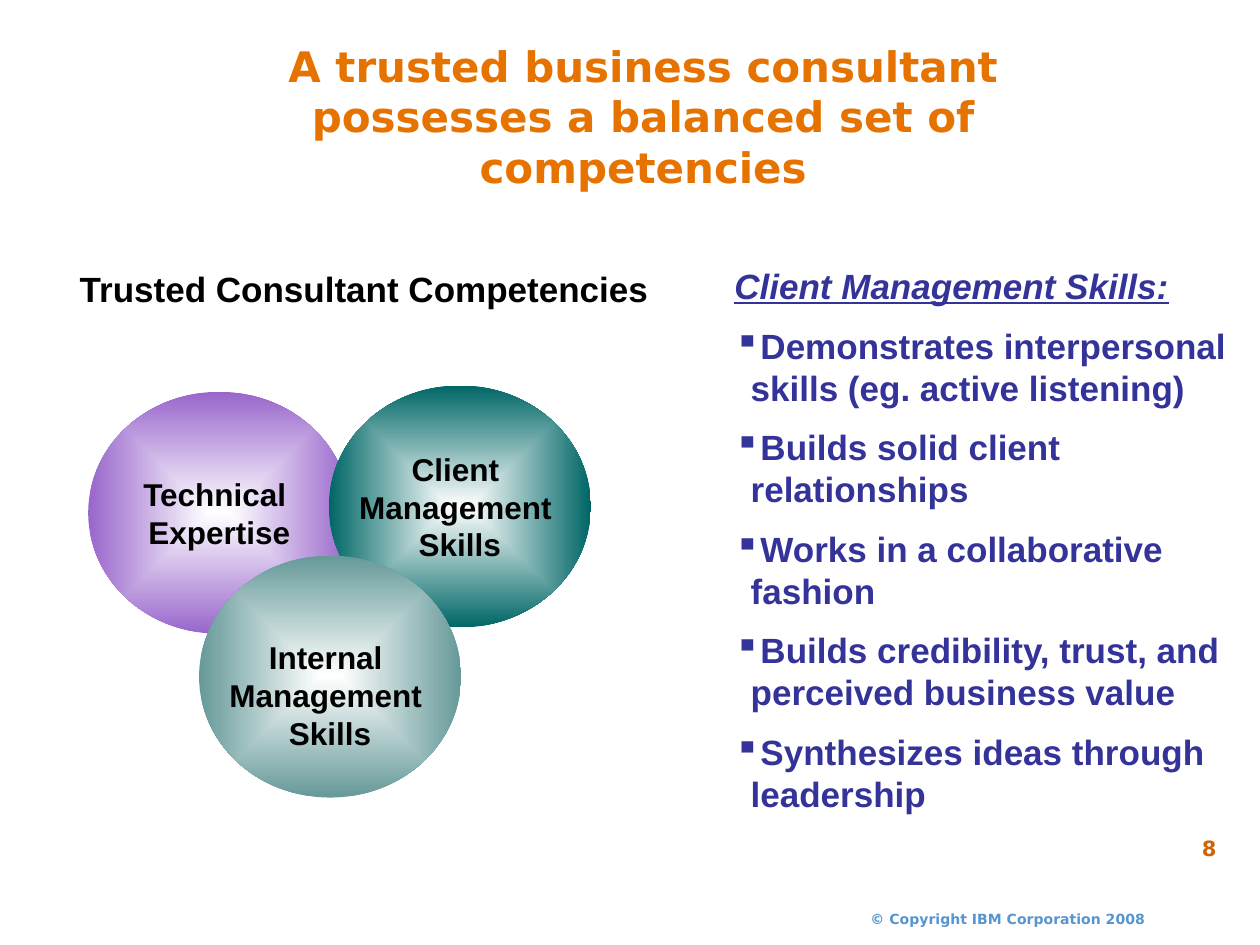
from dataclasses import dataclass

from lxml import etree
from pptx import Presentation
from pptx import util as u
from pptx.dml.color import RGBColor
from pptx.enum import shapes, text
from pptx.oxml.ns import qn

SANS, ARIAL = "DejaVu Sans", "Arial"
BLACK, WHITE, ORANGE, INDIGO = "000000", "FFFFFF", "E67300", "333399"
CENTER = text.PP_ALIGN.CENTER
ELLIPSE_SIZE = (2.08, 1.92)
INSET = dict(margin_left=0.1, margin_top=0.05, margin_right=0.1, margin_bottom=0.05)


@dataclass
class Competency:
    label: str
    left: float
    top: float
    colour: str
    inset_top: float = 0


@dataclass
class Line:
    words: str
    bullet: str = ""
    italic: bool = False
    underline: bool = False


COMPETENCIES = [
    Competency("Technical \nExpertise", 0.7, 3.11, "9966CC"),
    Competency("Client \nManagement \nSkills", 2.61, 3.06, "006666"),
    Competency("Internal \nManagement \nSkills", 1.58, 4.41, "669999", 0.29),
]
SKILLS = [
    "Demonstrates interpersonal skills (eg. active listening)",
    "Builds solid client relationships",
    "Works in a collaborative fashion",
    "Builds credibility, trust, and \nperceived business value",
    "Synthesizes ideas through leadership",
]


def rgb(colour: str) -> RGBColor:
    return RGBColor.from_string(colour)


def apply(target, values: dict) -> None:
    for name, value in values.items():
        setattr(target, name, value)


def write(paragraph, words: str, size: float, font: str, colour: str,
          align=None, **style) -> None:
    paragraph.text = words
    paragraph.alignment = align
    for run in paragraph.runs:
        apply(run.font, dict(size=u.Pt(size), name=font, bold=True, **style))
        run.font.color.rgb = rgb(colour)


def add_frame(slide, left: float, top: float, width: float, height: float,
              anchor=text.MSO_ANCHOR.TOP, **insets):
    """Add a wrapping text box and return its text frame."""
    box = slide.shapes.add_textbox(*map(u.Inches, (left, top, width, height)))
    frame = box.text_frame
    margins = {side: u.Inches(gap) for side, gap in (INSET | insets).items()}
    apply(frame, dict(word_wrap=True, vertical_anchor=anchor, **margins))
    return frame


def fill_from_centre(shape, colour: str) -> None:
    """Blend from white in the middle to the colour at the edge."""
    shape.fill.gradient()
    for stop, shade, position in zip(shape.fill.gradient_stops, (WHITE, colour), (0, 1)):
        stop.color.rgb = rgb(shade)
        stop.position = position
    gradient = shape._element.spPr.find(qn("a:gradFill"))
    gradient.remove(gradient.find(qn("a:lin")))
    path = etree.SubElement(gradient, qn("a:path"), {"path": "shape"})
    etree.SubElement(path, qn("a:fillToRect"), dict.fromkeys("ltrb", "50000"))


def add_competency(slide, item: Competency) -> None:
    ellipse = slide.shapes.add_shape(
        shapes.MSO_SHAPE.OVAL, *map(u.Inches, (item.left, item.top, *ELLIPSE_SIZE)))
    ellipse.shadow.inherit = False
    ellipse.line.fill.background()
    fill_from_centre(ellipse, item.colour)
    frame = ellipse.text_frame
    apply(frame, dict(word_wrap=False, vertical_anchor=text.MSO_ANCHOR.MIDDLE,
                      margin_left=0, margin_right=0, margin_bottom=0,
                      margin_top=u.Inches(item.inset_top)))
    write(frame.paragraphs[0], item.label, 18, ARIAL, BLACK, CENTER)


def add_skills(slide, lines: list[Line]) -> None:
    frame = add_frame(slide, 5.73, 2.05, 4.13, 4.6)
    for index, line in enumerate(lines):
        paragraph = frame.add_paragraph() if index else frame.paragraphs[0]
        write(paragraph, line.words, 20, ARIAL, INDIGO,
              italic=line.italic, underline=line.underline)
        if index:
            paragraph.space_before = u.Pt(10)
        properties = paragraph._p.get_or_add_pPr()
        indent = u.Inches(0.13)
        properties.set("marL", str(indent))
        properties.set("indent", str(-indent))
        if line.bullet:
            etree.SubElement(properties, qn("a:buChar"), {"char": line.bullet})


def main() -> None:
    deck = Presentation()
    deck.slide_width, deck.slide_height = u.Inches(10), u.Inches(7.5)
    slide = deck.slides.add_slide(deck.slide_layouts[6])

    copyright_line = add_frame(slide, 6.62, 7.18, 2.76, 0.23)
    write(copyright_line.paragraphs[0], "© Copyright IBM Corporation 2008",
          8, SANS, "5695CE", CENTER)
    page_number = add_frame(slide, 9.38, 6.56, 0.86, 0.35,
                            margin_left=0.16, margin_top=0.07)
    write(page_number.paragraphs[0], "8", 12, SANS, "CC660B")
    title = add_frame(slide, 1.26, 0.5, 7.69, 1.07, text.MSO_ANCHOR.BOTTOM)
    write(title.paragraphs[0],
          "A trusted business consultant possesses a balanced set of competencies",
          24, SANS, ORANGE, CENTER)

    for item in COMPETENCIES:
        add_competency(slide, item)

    heading = Line("Client Management Skills:", italic=True, underline=True)
    add_skills(slide, [heading] + [Line(skill, "▪") for skill in SKILLS])
    diagram_heading = add_frame(slide, 0.35, 2.07, 5.08, 0.43)
    write(diagram_heading.paragraphs[0], "Trusted Consultant Competencies",
          20, ARIAL, BLACK, CENTER)

    deck.save("out.pptx")


if __name__ == "__main__":
    main()
